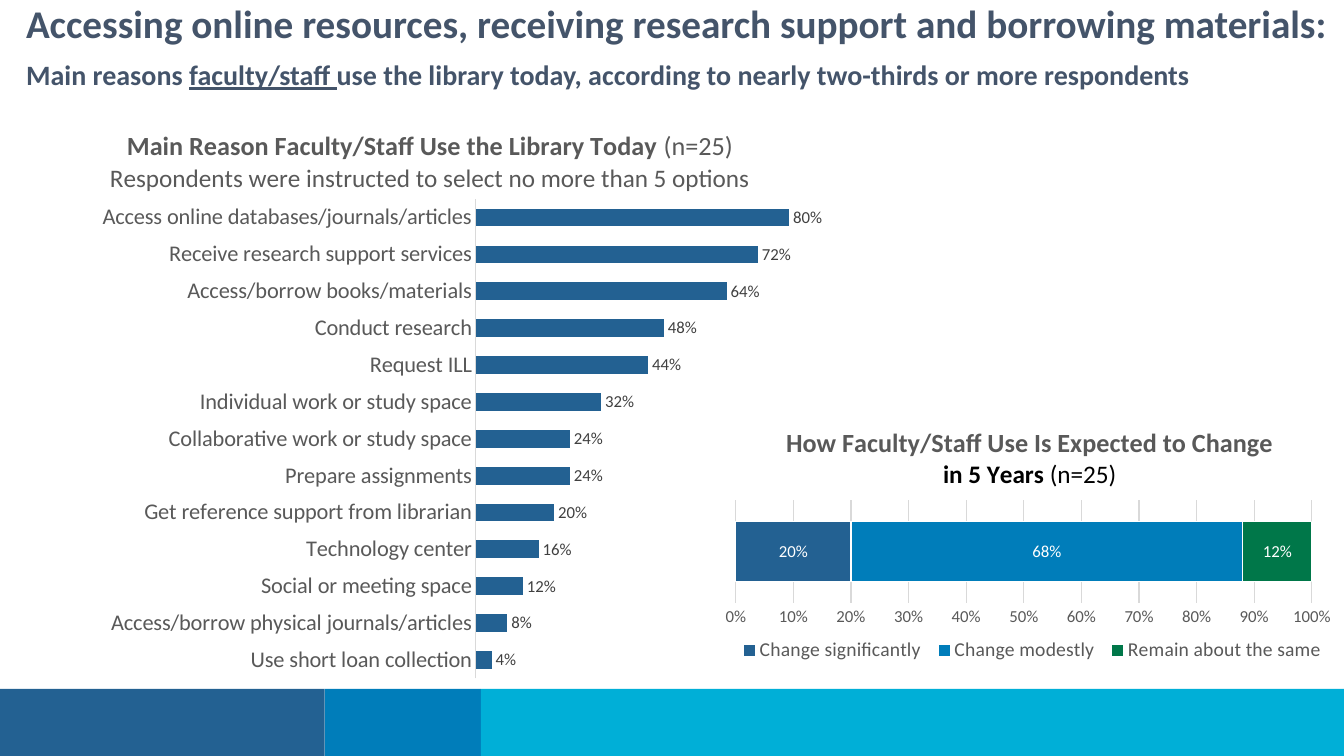
from dataclasses import dataclass
from typing import Optional

import lxml.etree
import pptx
import pptx.chart.data
import pptx.dml.color
import pptx.enum.chart
import pptx.enum.shapes
import pptx.oxml.ns
import pptx.util

Pt = pptx.util.Pt
RGB = pptx.dml.color.RGBColor
qn = pptx.oxml.ns.qn
XL = pptx.enum.chart


@dataclass(frozen=True)
class Theme:
    font: str = "Calibri"
    navy: str = "236192"
    blue: str = "007DBA"
    cyan: str = "00AFD7"
    green: str = "007749"
    heading: str = "44546A"
    grey: str = "595959"
    dark: str = "404040"
    rule: str = "D9D9D9"
    white: str = "FFFFFF"
    black: str = "000000"
    headline_size: float = 28
    subhead_size: float = 20
    chart_title_sizes: tuple = (18.7, 18)
    category_size: float = 16
    legend_size: float = 14
    label_size: float = 12
    base_size: float = 10


THEME = Theme()


@dataclass(frozen=True)
class Box:
    left: float
    top: float
    width: float
    height: float

    def points(self) -> tuple:
        return Pt(self.left), Pt(self.top), Pt(self.width), Pt(self.height)


@dataclass(frozen=True)
class Run:
    text: str
    bold: bool = True
    underline: bool = False
    color: str = THEME.grey


@dataclass(frozen=True)
class Series:
    name: str
    values: list
    color: str


@dataclass(frozen=True)
class BarChart:
    kind: XL.XL_CHART_TYPE
    box: Box
    title: list
    title_at: tuple
    plot: tuple
    categories: list
    series: list
    gap: int
    label_color: str
    outline: Optional[str] = None


BANDS = [(232, THEME.navy), (111.5, THEME.blue), (616.5, THEME.cyan)]

REASONS = {
    "Use short loan collection": 0.04,
    "Access/borrow physical journals/articles": 0.08,
    "Social or meeting space": 0.12,
    "Technology center": 0.16,
    "Get reference support from librarian": 0.2,
    "Prepare assignments": 0.24,
    "Collaborative work or study space": 0.24,
    "Individual work or study space": 0.32,
    "Request ILL": 0.44,
    "Conduct research": 0.48,
    "Access/borrow books/materials": 0.64,
    "Receive research support services": 0.72,
    "Access online databases/journals/articles": 0.8,
}

REASONS_CHART = BarChart(
    XL.XL_CHART_TYPE.BAR_CLUSTERED,
    Box(-9.4, 81.4, 640, 414),
    [[Run("Main Reason Faculty/Staff Use the Library Today "), Run("(n=25)", False)],
     [Run("Respondents were instructed to select no more than 5 options", False)]],
    (0.134, 0.02), (0.546, 0.147, 0.437, 0.827),
    list(REASONS), [Series("Series 1", list(REASONS.values()), THEME.navy)],
    107, THEME.dark)

CHANGE_CHART = BarChart(
    XL.XL_CHART_TYPE.BAR_STACKED_100,
    Box(509.8, 293.8, 450.7, 186.5),
    [[Run("How Faculty/Staff Use Is Expected to Change")],
     [Run("in 5 Years ", color=THEME.black), Run("(n=25)", False, color=THEME.black)]],
    (0.11, 0.04), (0.035, 0.34, 0.913, 0.394),
    ["1"],
    [Series("Change significantly", [0.2], THEME.navy),
     Series("Change modestly", [0.68], THEME.blue),
     Series("Remain about the same", [0.12], THEME.green)],
    69, THEME.white, THEME.white)

CHANGE_LEGEND = (0.03, 0.85, 0.95, 0.13)


def style_font(font, size: float, color: str, bold: Optional[bool] = None) -> None:
    font.name, font.size, font.bold = THEME.font, Pt(size), bold
    font.color.rgb = RGB.from_string(color)


def add_runs(p, runs: list) -> None:
    for run in runs:
        r = p.add_run()
        r.text = run.text
        r.font.bold = run.bold
        r.font.underline = run.underline or None
        r.font.color.rgb = RGB.from_string(run.color)


def set_layout(parent, index: int, place: tuple, inner: bool = False) -> None:
    for old in parent.findall(qn("c:layout")):
        parent.remove(old)
    layout = lxml.etree.Element(qn("c:layout"))
    manual = lxml.etree.SubElement(layout, qn("c:manualLayout"))
    settings = [("layoutTarget", "inner")] if inner else []
    settings += [("xMode", "edge"), ("yMode", "edge")]
    settings += zip("xywh", place)
    for tag, value in settings:
        lxml.etree.SubElement(manual, qn(f"c:{tag}")).set("val", str(value))
    parent.insert(index, layout)


def add_band(s, box: Box, color: str) -> None:
    sp = s.shapes.add_shape(pptx.enum.shapes.MSO_SHAPE.RECTANGLE, *box.points())
    sp.shadow.inherit = False
    sp.fill.solid()
    sp.fill.fore_color.rgb = RGB.from_string(color)
    sp.line.fill.background()


def add_heading(s, box: Box, lines: list) -> None:
    tf = s.shapes.add_textbox(*box.points()).text_frame
    tf.word_wrap = True
    for i, (size, runs) in enumerate(lines):
        p = tf.add_paragraph() if i else tf.paragraphs[0]
        p.line_spacing = 0.9
        p.space_before = Pt(10 if i else 0)
        style_font(p.font, size, THEME.heading, True)
        add_runs(p, runs)


def add_bar_chart(s, spec: BarChart):
    data = pptx.chart.data.CategoryChartData(number_format="0%")
    data.categories = spec.categories
    for series in spec.series:
        data.add_series(series.name, series.values)
    chart = s.shapes.add_chart(spec.kind, *spec.box.points(), data).chart
    style_font(chart.font, THEME.base_size, THEME.black)
    chart.has_legend = False

    tf = chart.chart_title.text_frame
    for i, (size, runs) in enumerate(zip(THEME.chart_title_sizes, spec.title)):
        p = tf.add_paragraph() if i else tf.paragraphs[0]
        style_font(p.font, size, THEME.grey)
        add_runs(p, runs)
        for r in p.runs:
            r.font.name, r.font.size = THEME.font, Pt(size)
    set_layout(chart.chart_title._element, 1, spec.title_at)

    plot = chart.plots[0]
    set_layout(plot._element.getparent(), 0, spec.plot, True)
    plot.gap_width = spec.gap
    plot.vary_by_categories = False
    for series, bar in zip(spec.series, plot.series):
        bar.format.fill.solid()
        bar.format.fill.fore_color.rgb = RGB.from_string(series.color)
        if spec.outline:
            bar.format.line.color.rgb = RGB.from_string(spec.outline)
            bar.format.line.width = Pt(0.75)
        labels = bar.data_labels
        labels.show_value = True
        labels.number_format, labels.number_format_is_linked = "0%", False
        style_font(labels.font, THEME.label_size, spec.label_color)
    return chart


def style_axis(axis, size: float) -> None:
    axis.major_tick_mark = axis.minor_tick_mark = XL.XL_TICK_MARK.NONE
    style_font(axis.tick_labels.font, size, THEME.grey)


def style_rule(line) -> None:
    line.color.rgb = RGB.from_string(THEME.rule)
    line.width = Pt(0.75)


def main() -> None:
    prs = pptx.Presentation()
    prs.slide_width, prs.slide_height = Pt(960), Pt(540)
    s = prs.slides.add_slide(prs.slide_layouts[6])

    left = 0
    for width, color in BANDS:
        add_band(s, Box(left, 492, width, 48), color)
        left += width

    add_heading(s, Box(11.5, 0, 948.5, 101.5), [
        (THEME.headline_size, [Run(
            "Accessing online resources, receiving research support and borrowing materials:",
            color=THEME.heading)]),
        (THEME.subhead_size, [
            Run("Main reasons ", color=THEME.heading),
            Run("faculty/staff ", underline=True, color=THEME.heading),
            Run("use the library today, according to nearly two-thirds or more respondents",
                color=THEME.heading)]),
    ])

    reasons = add_bar_chart(s, REASONS_CHART)
    style_axis(reasons.category_axis, THEME.category_size)
    style_rule(reasons.category_axis.format.line)
    scale = reasons.value_axis
    scale.minimum_scale, scale.maximum_scale, scale.major_unit = 0, 1, 0.2
    scale.has_major_gridlines = scale.visible = False

    change = add_bar_chart(s, CHANGE_CHART)
    change.plots[0].overlap = 100
    change.category_axis.visible = False
    scale = change.value_axis
    style_axis(scale, THEME.label_size)
    scale.tick_labels.number_format = "0%"
    scale.tick_labels.number_format_is_linked = False
    scale.format.line.fill.background()
    style_rule(scale.major_gridlines.format.line)
    change.has_legend = True
    change.legend.position = XL.XL_LEGEND_POSITION.BOTTOM
    change.legend.include_in_layout = False
    style_font(change.legend.font, THEME.legend_size, THEME.grey)
    set_layout(change.legend._element, 1, CHANGE_LEGEND)

    prs.save("out.pptx")


if __name__ == "__main__":
    main()
